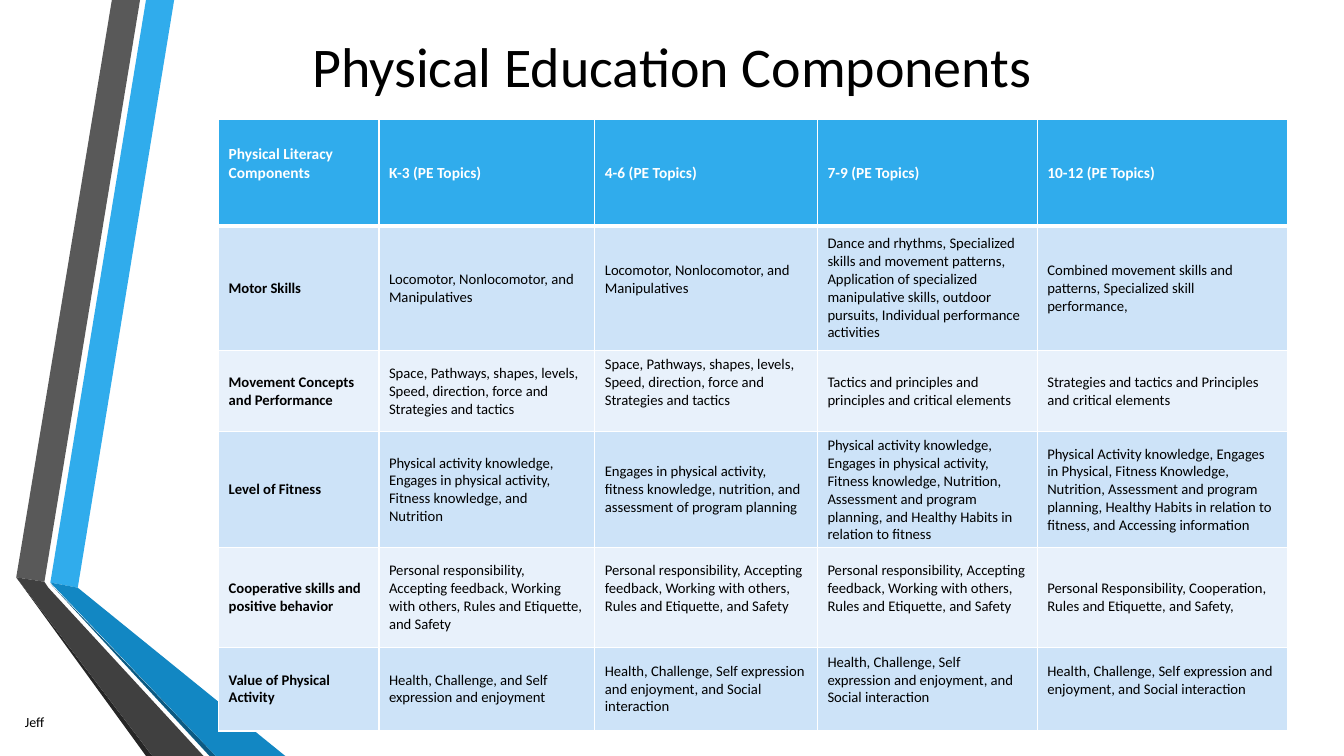
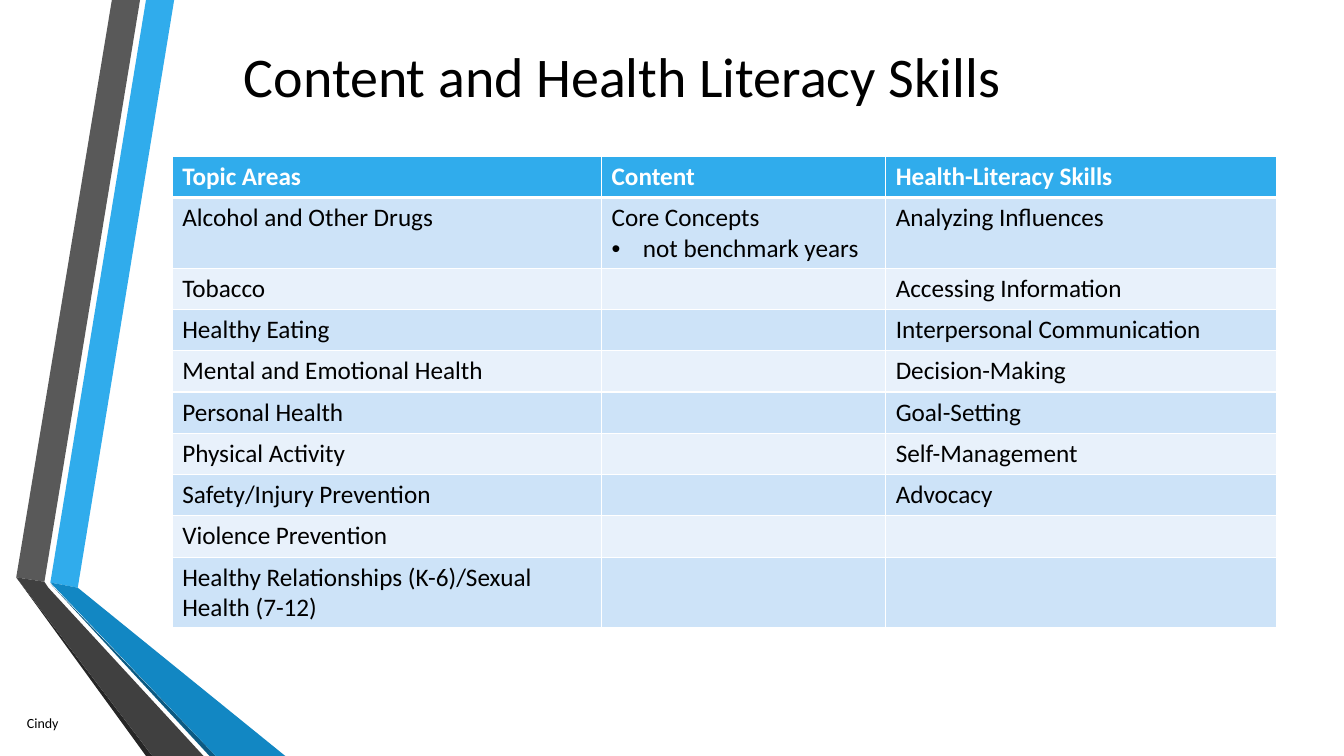
from lxml import etree
from pptx import Presentation
from pptx.dml.color import RGBColor
from pptx.enum import text
from pptx.oxml import ns
from pptx.util import Cm, Pt

BLUE, BLACK, WHITE = "30ACEC", "000000", "FFFFFF"
ROWS = ["E8F1FB", "CDE3F8"]

BANDS = [
    (BLUE, [(1.27, 14.68), (1.96, 14.81), (4.39, 0), (3.68, 0)]),
    ("595959", [(3.53, 0), (2.82, 0), (0.41, 14.55), (1.12, 14.66)]),
    ("262626", [(0.41, 14.55), (3.68, 19.05), (3.84, 19.05)]),
    ("0C5A82", [(1.27, 14.71), (5.28, 19.05), (5.44, 19.05)]),
    ("1287C3", [(1.27, 14.68), (5.44, 19.05), (7.19, 19.05), (1.96, 14.81)]),
    ("404040", [(5.13, 19.05), (1.22, 14.81), (1.12, 14.66), (0.41, 14.55),
                (3.84, 19.05)]),
]

MOVES = "Space, Pathways, shapes, levels, Speed, direction, force and Strategies and tactics"
BASICS = "Locomotor, Nonlocomotor, and Manipulatives"
CONDUCT = ("Personal responsibility, Accepting feedback, Working with others, "
           "Rules and Etiquette, and Safety")
VALUES = "Health, Challenge, Self expression and enjoyment, and Social interaction"

PAGES = [
    {
        "title": "Physical Education Components",
        "box": (4.09, 0.28, 25.68, 2.74),
        "name": "Jeff", "tag": (0.38, 17.86, 1.04, 0.69),
        "at": (5.51, 3.02),
        "cols": [4.04, 5.44, 5.61, 5.54, 6.32],
        "rows": [2.67, 3.15, 1.98, 2.84, 2.51, 2.11],
        "sizes": (11, 10.5), "bold": True,
        "anchor": text.MSO_ANCHOR.MIDDLE,
        "raised": {(0, 0), (1, 2), (2, 2), (4, 2), (4, 3), (5, 3), (5, 4)},
        "cells": [
            ["Physical Literacy Components", "K-3 (PE Topics)", "4-6 (PE Topics)",
             "7-9 (PE Topics)", "10-12 (PE Topics)"],
            ["Motor Skills", BASICS, BASICS,
             "Dance and rhythms, Specialized skills and movement patterns, "
             "Application of specialized manipulative skills, outdoor pursuits, "
             "Individual performance activities",
             "Combined movement skills and patterns, Specialized skill performance,"],
            ["Movement Concepts and Performance", MOVES, MOVES,
             "Tactics and principles and principles and critical elements",
             "Strategies and tactics and Principles and critical elements"],
            ["Level of Fitness",
             "Physical activity knowledge, Engages in physical activity, "
             "Fitness knowledge, and Nutrition",
             "Engages in physical activity, fitness knowledge, nutrition, "
             "and assessment of program planning",
             "Physical activity knowledge, Engages in physical activity, "
             "Fitness knowledge, Nutrition, Assessment and program planning, "
             "and Healthy Habits in relation to fitness",
             "Physical Activity knowledge, Engages in Physical, Fitness Knowledge, "
             "Nutrition, Assessment and program planning, Healthy Habits in "
             "relation to fitness, and Accessing information"],
            ["Cooperative skills and positive behavior", CONDUCT, CONDUCT, CONDUCT,
             "Personal Responsibility, Cooperation, Rules and Etiquette, and Safety,"],
            ["Value of Physical Activity",
             "Health, Challenge, and Self expression and enjoyment",
             VALUES, VALUES, VALUES],
        ],
    },
    {
        "title": "Content and Health Literacy Skills",
        "box": (4.34, 0.61, 22.68, 2.59),
        "name": "Cindy", "tag": (0.43, 17.88, 1.35, 0.69),
        "at": (4.34, 3.94),
        "cols": [10.82, 7.16, 9.86],
        "rows": [1.04] * 10,
        "sizes": (18, 18), "bold": False,
        "anchor": text.MSO_ANCHOR.TOP,
        "raised": set(),
        "cells": [
            ["Topic Areas", "Content", "Health-Literacy Skills"],
            ["Alcohol and Other Drugs", "Core Concepts\nnot benchmark years",
             "Analyzing Influences"],
            ["Tobacco", "", "Accessing Information"],
            ["Healthy Eating", "", "Interpersonal Communication"],
            ["Mental and Emotional Health", "", "Decision-Making"],
            ["Personal Health", "", "Goal-Setting"],
            ["Physical Activity", "", "Self-Management"],
            ["Safety/Injury Prevention", "", "Advocacy"],
            ["Violence Prevention", "", ""],
            ["Healthy Relationships (K-6)/Sexual Health (7-12)", "", ""],
        ],
    },
]


def paint(fill, color):
    fill.solid()
    fill.fore_color.rgb = RGBColor.from_string(color)


def write(frame, words, size, color=BLACK, bold=False):
    """Fill a text frame; every line after the first is a bullet."""
    for i, line in enumerate(words.split("\n")):
        par = frame.add_paragraph() if i else frame.paragraphs[0]
        if i:
            props = par._p.get_or_add_pPr()
            props.set("marL", str(Cm(0.79)))
            props.set("indent", str(-Cm(0.79)))
            etree.SubElement(props, ns.qn("a:buFont"), typeface="Arial")
            etree.SubElement(props, ns.qn("a:buChar"), char="•")
        if not line:
            par.font.size = Pt(size)
            continue
        run = par.add_run()
        run.text = line
        run.font.name = "Calibri"
        run.font.size = Pt(size)
        run.font.bold = bold
        paint(run.font.fill, color)


deck = Presentation()
deck.slide_width, deck.slide_height = Cm(33.87), Cm(19.05)
blank = deck.slide_layouts[6]
for holder in list(blank.placeholders):
    blank.shapes.element.remove(holder.element)
slides = [deck.slides.add_slide(blank) for page in PAGES]

# The bands are drawn once and moved to the layout that both slides share
bands = []
for color, points in BANDS:
    start, *rest = [(Cm(x), Cm(y)) for x, y in points]
    build = slides[0].shapes.build_freeform(*start)
    build.add_line_segments(rest)
    band = build.convert_to_shape()
    band.shadow.inherit = False
    paint(band.fill, color)
    band.line.fill.background()
    bands.append(band)
for band in bands:
    blank.shapes.element.append(band.element)

for slide, page in zip(slides, PAGES):
    title = slide.shapes.add_textbox(*map(Cm, page["box"])).text_frame
    title.word_wrap = True
    title.vertical_anchor = text.MSO_ANCHOR.MIDDLE
    write(title, page["title"], 40)
    title.paragraphs[0].alignment = text.PP_ALIGN.CENTER

    cols, rows = page["cols"], page["rows"]
    left, top = page["at"]
    table = slide.shapes.add_table(
        len(rows), len(cols), Cm(left), Cm(top), Cm(sum(cols)), Cm(sum(rows))).table
    for col, width in zip(table.columns, cols):
        col.width = Cm(width)
    for row, height in zip(table.rows, rows):
        row.height = Cm(height)

    for r, line in enumerate(page["cells"]):
        head = r == 0
        for c, words in enumerate(line):
            cell = table.cell(r, c)
            cell.vertical_anchor = page["anchor"]
            if (r, c) in page["raised"]:
                cell.margin_bottom = Cm(0.58)
            write(cell.text_frame, words, page["sizes"][0 if head else 1],
                  WHITE if head else BLACK, head or (page["bold"] and c == 0))
            paint(cell.fill, BLUE if head else ROWS[r % 2])
            props = cell._tc.get_or_add_tcPr()
            for i, side in enumerate(["lnL", "lnR", "lnT", "lnB"]):
                thick = (r, side) in [(0, "lnB"), (1, "lnT")]
                edge = etree.Element(ns.qn("a:" + side), w=str(Pt(3 if thick else 1)))
                solid = etree.SubElement(edge, ns.qn("a:solidFill"))
                etree.SubElement(solid, ns.qn("a:srgbClr"), val=WHITE)
                props.insert(i, edge)

    tag = slide.shapes.add_textbox(*map(Cm, page["tag"])).text_frame
    tag.word_wrap = False
    tag.auto_size = text.MSO_AUTO_SIZE.SHAPE_TO_FIT_TEXT
    write(tag, page["name"], 10)

deck.save("out.pptx")
